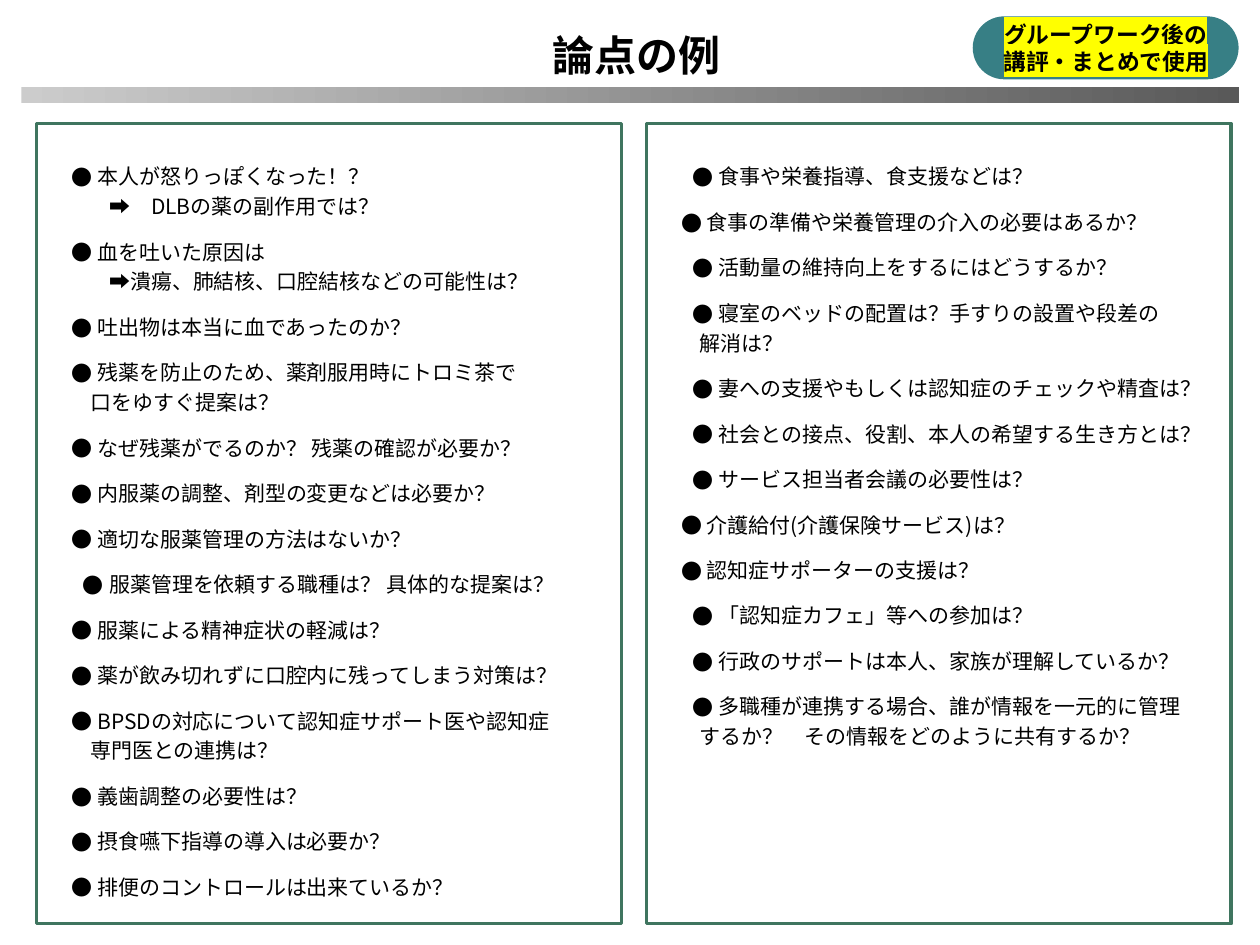
import pptx
import pptx.dml.color
import pptx.enum.shapes
import pptx.enum.text
import pptx.oxml
import pptx.oxml.ns
import pptx.util

Cm = pptx.util.Cm
Pt = pptx.util.Pt
FONT = "Noto Sans CJK JP"
ALIGN = pptx.enum.text.PP_ALIGN
ANCHOR = pptx.enum.text.MSO_ANCHOR
SHAPE = pptx.enum.shapes.MSO_SHAPE
TWO_CONTENT_LAYOUT = 3

LINE_STYLES = {
    "item": {"bullet": 0.19, "text": 0.71, "height": 23, "before": 3},
    "inner": {"bullet": 0.42, "text": 0.95, "height": 23, "before": 3},
    "more": {"bullet": None, "text": 0.57, "height": 17, "before": 0},
    "arrow": {"bullet": None, "text": 0.95, "height": 17, "before": 0},
}

MEDICAL_POINTS = [
    ("item", "本人が怒りっぽくなった！？"),
    ("arrow", "➡　DLBの薬の副作用では？"),
    ("item", "血を吐いた原因は"),
    ("arrow", "➡潰瘍、肺結核、口腔結核などの可能性は？"),
    ("item", "吐出物は本当に血であったのか？"),
    ("item", "残薬を防止のため、薬剤服用時にトロミ茶で"),
    ("more", "口をゆすぐ提案は？"),
    ("item", "なぜ残薬がでるのか？ 残薬の確認が必要か？"),
    ("item", "内服薬の調整、剤型の変更などは必要か？"),
    ("item", "適切な服薬管理の方法はないか？"),
    ("inner", "服薬管理を依頼する職種は？ 具体的な提案は？"),
    ("item", "服薬による精神症状の軽減は？"),
    ("item", "薬が飲み切れずに口腔内に残ってしまう対策は？"),
    ("item", "BPSDの対応について認知症サポート医や認知症"),
    ("more", "専門医との連携は？"),
    ("item", "義歯調整の必要性は？"),
    ("item", "摂食嚥下指導の導入は必要か？"),
    ("item", "排便のコントロールは出来ているか？"),
]

LIVING_POINTS = [
    ("inner", "食事や栄養指導、食支援などは？"),
    ("item", "食事の準備や栄養管理の介入の必要はあるか？"),
    ("inner", "活動量の維持向上をするにはどうするか？"),
    ("inner", "寝室のベッドの配置は？手すりの設置や段差の"),
    ("more", "解消は？"),
    ("inner", "妻への支援やもしくは認知症のチェックや精査は？"),
    ("inner", "社会との接点、役割、本人の希望する生き方とは？"),
    ("inner", "サービス担当者会議の必要性は？"),
    ("item", "介護給付(介護保険サービス)は？"),
    ("item", "認知症サポーターの支援は？"),
    ("inner", "「認知症カフェ」等への参加は？"),
    ("inner", "行政のサポートは本人、家族が理解しているか？"),
    ("inner", "多職種が連携する場合、誰が情報を一元的に管理"),
    ("more", "するか？　その情報をどのように共有するか？"),
]


def color(value):
    return pptx.dml.color.RGBColor.from_string(value)


def set_values(target, values):
    for name, value in values.items():
        setattr(target, name, value)


def add_element(parent, tag, **attributes):
    element = pptx.oxml.parse_xml(f"<{tag} {pptx.oxml.ns.nsdecls('a')}/>")
    for name, value in attributes.items():
        element.set(name, str(value))
    parent.append(element)
    return element


def place(shape, box):
    names = ("left", "top", "width", "height")
    set_values(shape, dict(zip(names, map(Cm, box))))


def format_frame(frame, horizontal, vertical, **values):
    set_values(frame, {
        "margin_left": Cm(horizontal), "margin_right": Cm(horizontal),
        "margin_top": Cm(vertical), "margin_bottom": Cm(vertical),
        "auto_size": pptx.enum.text.MSO_AUTO_SIZE.NONE,
        "word_wrap": True, "vertical_anchor": ANCHOR.TOP, **values,
    })


def write_text(paragraph, text, size, bold=False, highlight=None):
    run = paragraph.add_run()
    run.text = text
    set_values(run.font, {"size": Pt(size), "bold": bold})
    run.font.color.rgb = color("000000")
    properties = run.font._element
    if highlight:
        marker = add_element(properties, "a:highlight")
        add_element(marker, "a:srgbClr", val=highlight)
    run.font.name = FONT
    add_element(properties, "a:ea", typeface=FONT)


def write_paragraphs(frame, count):
    for _ in range(count - 1):
        frame.add_paragraph()
    return frame.paragraphs


def add_shape(slide, kind, box):
    shape = slide.shapes.add_shape(kind, *map(Cm, box))
    shape.shadow.inherit = False
    shape.line.fill.background()
    return shape


def build_header(slide, box):
    left, top, width, height = box
    title = slide.shapes.title
    place(title, (left + 0.13, top, width, 1.4))
    format_frame(title.text_frame, 0.25, 0.13)
    paragraph = title.text_frame.paragraphs[0]
    set_values(paragraph, {"alignment": ALIGN.CENTER, "line_spacing": Pt(32)})
    write_text(paragraph, "論点の例", 24, bold=True)

    bar = add_shape(slide, SHAPE.RECTANGLE, (left, top + height - 0.33, width, 0.33))
    bar.fill.gradient()
    bar.fill.gradient_angle = 0
    for stop, value in zip(bar.fill.gradient_stops, ("CCCCCC", "595959")):
        stop.color.rgb = color(value)


def build_panel(panel, box, points):
    place(panel, box)
    panel.fill.background()
    panel.line.color.rgb = color("3F755F")
    panel.line.width = Pt(2)
    format_frame(panel.text_frame, 0.51, 0.51)
    paragraphs = write_paragraphs(panel.text_frame, len(points))
    for index, (paragraph, (kind, text)) in enumerate(zip(paragraphs, points)):
        style = LINE_STYLES[kind]
        set_values(paragraph, {
            "alignment": ALIGN.LEFT,
            "line_spacing": Pt(style["height"]),
            "space_before": Pt(style["before"] if index else 0),
            "space_after": Pt(0),
        })
        properties = paragraph._p.get_or_add_pPr()
        properties.set("marL", str(Cm(style["text"])))
        if style["bullet"] is None:
            properties.set("indent", "0")
            add_element(properties, "a:buNone")
        else:
            properties.set("indent", str(Cm(style["bullet"] - style["text"])))
            add_element(properties, "a:buFont", typeface=FONT)
            add_element(properties, "a:buChar", char="●")
        write_text(paragraph, text, 12)


def build_badge(slide, box, lines):
    badge = add_shape(slide, SHAPE.ROUNDED_RECTANGLE, box)
    badge.adjustments[0] = 0.5
    badge.fill.solid()
    badge.fill.fore_color.rgb = color("377F85")
    format_frame(badge.text_frame, 0.25, 0.13,
                 word_wrap=False, vertical_anchor=ANCHOR.MIDDLE)
    paragraphs = write_paragraphs(badge.text_frame, len(lines))
    for paragraph, text in zip(paragraphs, lines):
        paragraph.alignment = ALIGN.CENTER
        write_text(paragraph, text, 13, bold=True, highlight="FFFF00")


def main():
    presentation = pptx.Presentation()
    set_values(presentation, {"slide_width": Cm(25.4), "slide_height": Cm(19.05)})
    layout = presentation.slide_layouts[TWO_CONTENT_LAYOUT]
    slide = presentation.slides.add_slide(layout)

    build_header(slide, (0.43, 0.36, 24.54, 1.72))
    panel_width, gap = 11.79, 0.5
    for column, points in enumerate((MEDICAL_POINTS, LIVING_POINTS)):
        left = 0.74 + column * (panel_width + gap)
        build_panel(slide.placeholders[column + 1],
                    (left, 2.49, panel_width, 16.13), points)
    build_badge(slide, (19.61, 0.33, 5.36, 1.27),
                ("グループワーク後の", "講評・まとめで使用"))
    presentation.save("out.pptx")


if __name__ == "__main__":
    main()
